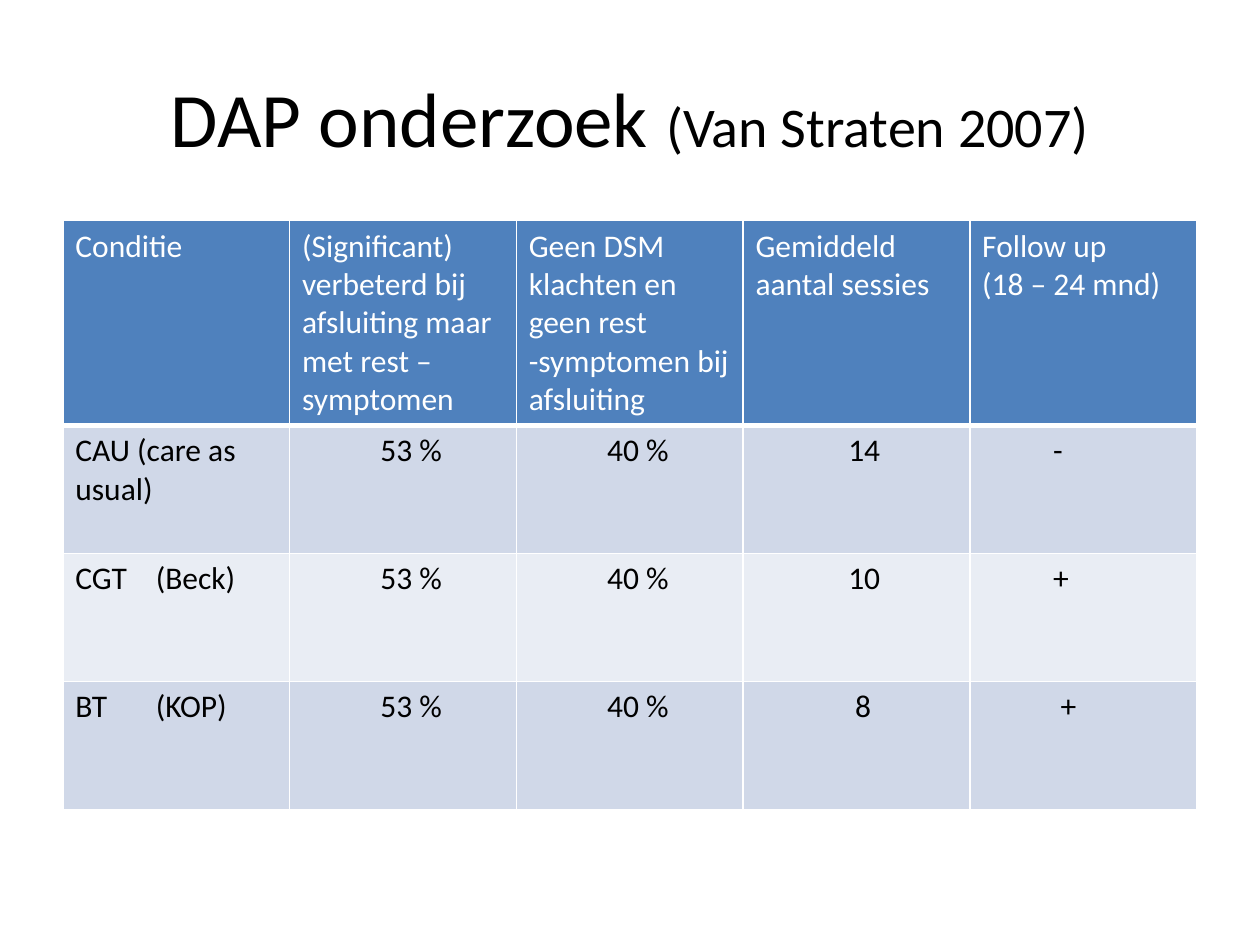
from lxml.etree import SubElement
from pptx import Presentation
from pptx.dml.color import RGBColor
from pptx.enum.text import MSO_ANCHOR, PP_ALIGN
from pptx.oxml.ns import qn
from pptx.util import Cm, Pt


def color(value):
    return RGBColor.from_string(value)


def add_border(cell, side, width):
    line = SubElement(cell._tc.get_or_add_tcPr(), qn(f"a:{side}"), w=str(Pt(width)))
    fill = SubElement(line, qn("a:solidFill"))
    SubElement(fill, qn("a:srgbClr"), val="FFFFFF")


deck = Presentation()
deck.slide_width = Cm(25.4)
deck.slide_height = Cm(19.05)
page = deck.slides.add_slide(deck.slide_layouts[6])

title = page.shapes.add_textbox(Cm(1.27), Cm(0.76), Cm(22.86), Cm(3.18))
title.text_frame.word_wrap = True
title.text_frame.vertical_anchor = MSO_ANCHOR.MIDDLE
para = title.text_frame.paragraphs[0]
para.alignment = PP_ALIGN.CENTER
para.font.name = "Calibri"
para.font.color.rgb = color("000000")
for text, size in (("DAP onderzoek ", 44), ("(Van Straten 2007)", 32)):
    span = para.add_run()
    span.text = text
    span.font.size = Pt(size)

rows = [
    ["Conditie", "(Significant) verbeterd bij afsluiting maar met rest –symptomen",
     "Geen DSM klachten en geen rest -symptomen bij afsluiting",
     "Gemiddeld aantal sessies", "Follow up\n(18 – 24 mnd)"],
    ["CAU (care as usual)", "53 %", "40 %", "14", "-"],
    ["CGT\t(Beck)", "53 %", "40 %", "10", "+"],
    ["BT\t(KOP)", "53 %", "40 %", "8", "+"],
]
indents = [
    [0, 0, 0, 0, 0],
    [0, 1.58, 1.58, 1.87, 1.43],
    [0, 1.58, 1.58, 1.87, 1.43],
    [0, 1.58, 1.58, 2.01, 1.58],
]
fills = ["4F81BD", "D0D8E8", "E9EDF4", "D0D8E8"]
heights = [4.13, 2.58, 2.58, 2.58]

table = page.shapes.add_table(
    len(rows), len(rows[0]), Cm(1.27), Cm(4.45), Cm(22.86), Cm(sum(heights))
).table
for column in table.columns:
    column.width = Cm(4.57)

for row, texts in enumerate(rows):
    table.rows[row].height = Cm(heights[row])
    for column, text in enumerate(texts):
        cell = table.cell(row, column)
        cell.text = text
        cell.margin_left = Cm(0.25 + indents[row][column])
        for side in ("lnL", "lnR", "lnT", "lnB"):
            add_border(cell, side, 3 if row == 0 and side == "lnB" else 1)
        cell.fill.solid()
        cell.fill.fore_color.rgb = color(fills[row])
        for para in cell.text_frame.paragraphs:
            if "\t" in text:
                tabs = SubElement(para._p.get_or_add_pPr(), qn("a:tabLst"))
                SubElement(tabs, qn("a:tab"), pos=str(Cm(1.62)), algn="l")
            para.font.name = "Calibri"
            para.font.size = Pt(18)
            para.font.bold = False
            para.font.color.rgb = color("FFFFFF" if row == 0 else "000000")

deck.save("out.pptx")
